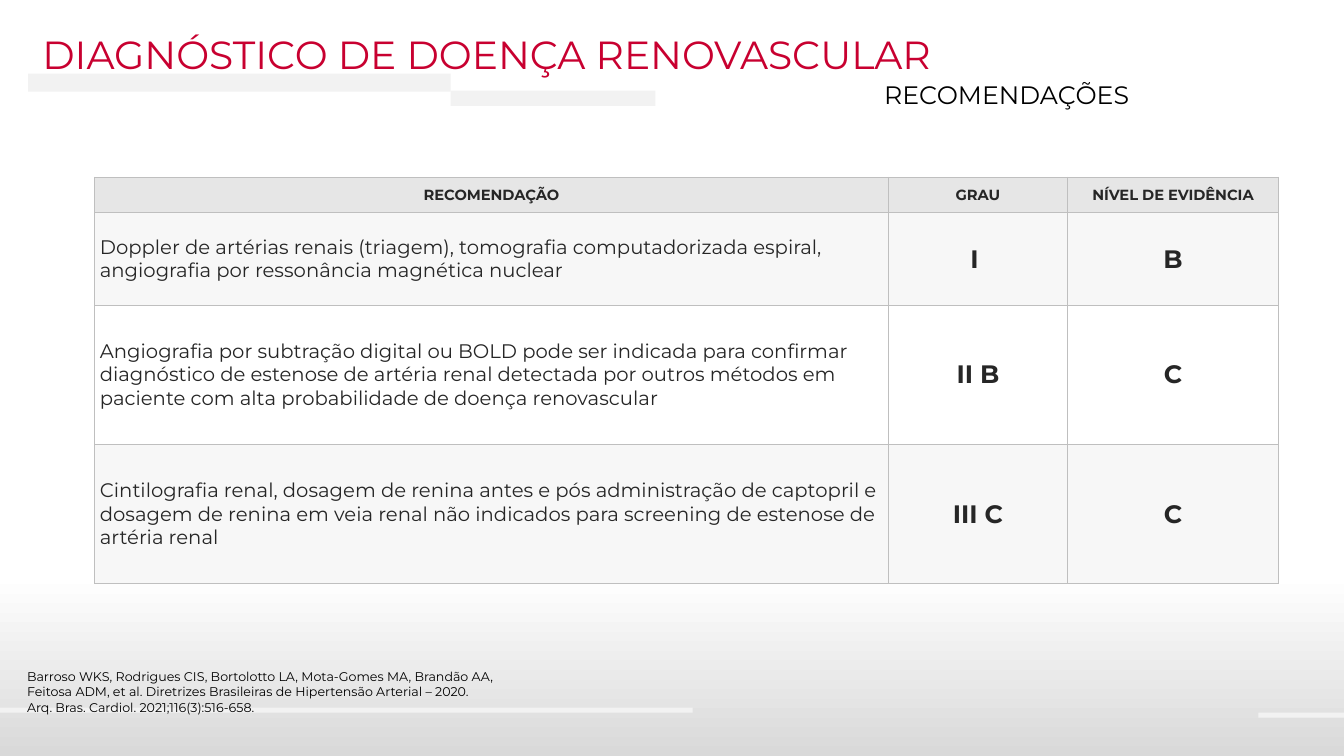
from lxml.etree import SubElement
from pptx import Presentation
from pptx.dml.color import RGBColor as RGB
from pptx.enum.shapes import MSO_SHAPE as SHAPE
from pptx.enum.text import MSO_ANCHOR as ANCHOR, PP_ALIGN as ALIGN
from pptx.oxml import parse_xml
from pptx.oxml.ns import nsdecls, qn
from pptx.util import Inches, Pt

COLORS = {
    "title": "C80030", "black": "000000", "cell_text": "262626",
    "bar": "F2F2F2", "white": "FFFFFF", "shade": "D9D9D9",
    "header": "E6E6E6", "border": "BFBFBF",
}


def rgb(name):
    return RGB.from_string(COLORS[name])


def write(tf, text, size=14, color="black", bold=False, align=ALIGN.LEFT,
          anchor=ANCHOR.TOP, font="Montserrat"):
    """Fill a text frame, one paragraph for each line of text."""
    tf.word_wrap = True
    tf.vertical_anchor = anchor
    for i, line in enumerate(text.split("\n")):
        p = tf.add_paragraph() if i else tf.paragraphs[0]
        p.alignment = align
        r = p.add_run()
        r.text = line
        r.font.name = font
        r.font.size = Pt(size)
        r.font.bold = bold
        r.font.color.rgb = rgb(color)


class SlideBuilder:
    def __init__(self, prs):
        self.slide = prs.slides.add_slide(prs.slide_layouts[5])
        self.shapes = self.slide.shapes

    def rect(self, x, y, w, h, color=None):
        sp = self.shapes.add_shape(SHAPE.RECTANGLE, *map(Inches, (x, y, w, h)))
        sp.shadow.inherit = False
        sp.line.fill.background()
        if color:
            sp.fill.solid()
            sp.fill.fore_color.rgb = rgb(color)
        return sp

    def backdrop(self, w, h):
        fill = self.rect(0, 0, w, h).fill
        fill.gradient()
        fill.gradient_angle = 270
        stops = ((0.76, "white"), (1, "shade"))
        for stop, (position, color) in zip(fill.gradient_stops, stops):
            stop.position = position
            stop.color.rgb = rgb(color)

    def title(self, x, y, w, h, text, **fmt):
        sp = self.shapes.title
        sp.left, sp.top, sp.width, sp.height = map(Inches, (x, y, w, h))
        write(sp.text_frame, text, **fmt)
        # Bring the title in front of the backdrop
        self.shapes._spTree.append(sp._element)

    def text(self, x, y, w, h, text, **fmt):
        sp = self.shapes.add_textbox(*map(Inches, (x, y, w, h)))
        write(sp.text_frame, text, **fmt)

    def cell(self, cell, text, fill=None, alpha=None, **fmt):
        cell.margin_left = cell.margin_right = Inches(0.05)
        cell.margin_top = cell.margin_bottom = 0
        write(cell.text_frame, text, color="cell_text", **fmt)
        cell.vertical_anchor = ANCHOR.MIDDLE
        tc_pr = cell._tc.get_or_add_tcPr()
        if fill:
            cell.fill.solid()
            cell.fill.fore_color.rgb = rgb(fill)
            if alpha:
                color = tc_pr.find(".//" + qn("a:srgbClr"))
                SubElement(color, qn("a:alpha"), val=str(alpha * 1000))
        else:
            cell.fill.background()
        for i, side in enumerate("LRTB"):
            tc_pr.insert(i, parse_xml(
                f'<a:ln{side} {nsdecls("a")} w="12700"><a:solidFill>'
                f'<a:srgbClr val="{COLORS["border"]}"/></a:solidFill></a:ln{side}>'))

    def table(self, x, y, widths, heights, rows):
        frame = self.shapes.add_table(
            len(rows), len(widths),
            *map(Inches, (x, y, sum(widths), sum(heights))))
        table = frame.table
        table.horz_banding = table.first_row = False
        for column, width in zip(table.columns, widths):
            column.width = Inches(width)
        for i, (height, row) in enumerate(zip(heights, rows)):
            table.rows[i].height = Inches(height)
            for j, text in enumerate(row):
                if i == 0:
                    fmt = dict(fill="header", size=10.5)
                else:
                    # Odd body rows are shaded
                    fmt = dict(fill="shade" if i % 2 else None, alpha=20,
                               size=18 if j else 14)
                heading = i == 0 or j > 0
                self.cell(table.cell(i, j), text, bold=heading,
                          align=ALIGN.CENTER if heading else ALIGN.LEFT, **fmt)


ROWS = [
    ("RECOMENDAÇÃO", "GRAU", "NÍVEL DE EVIDÊNCIA"),
    ("Doppler de artérias renais (triagem), tomografia computadorizada espiral, "
     "angiografia por ressonância magnética nuclear", "I ", "B"),
    ("Angiografia por subtração digital ou BOLD pode ser indicada para confirmar "
     "diagnóstico de estenose de artéria renal detectada por outros métodos em "
     "paciente com alta probabilidade de doença renovascular", "II B", "C"),
    ("Cintilografia renal, dosagem de renina antes e pós administração de captopril e "
     "dosagem de renina em veia renal não indicados para screening de estenose de "
     "artéria renal", "III C", "C"),
]

BARS = [(0.28, 0.73, 4.19, 0.18), (4.47, 0.9, 2.03, 0.15),
        (0, 7.02, 6.87, 0.05), (12.48, 7.07, 0.85, 0.05)]

CITATION = (
    "Barroso WKS, Rodrigues CIS, Bortolotto LA, Mota-Gomes MA, Brandão AA,\n"
    "Feitosa ADM, et al. Diretrizes Brasileiras de Hipertensão Arterial – 2020.\n"
    "Arq. Bras. Cardiol. 2021;116(3):516-658.")


def main():
    prs = Presentation()
    prs.slide_width, prs.slide_height = Inches(13.33), Inches(7.5)
    s = SlideBuilder(prs)

    # Backdrop and decorative bars
    s.backdrop(13.33, 7.5)
    for bar in BARS:
        s.rect(*bar, color="bar")

    # Headings
    s.title(0.32, 0.25, 11.46, 0.57, "DIAGNÓSTICO DE DOENÇA RENOVASCULAR",
            size=28, color="title")
    s.text(8.67, 0.74, 4.26, 0.4, "RECOMENDAÇÕES", size=18)

    # Recommendations and their source
    s.table(0.94, 1.76, (7.87, 1.78, 2.09), (0.35, 0.92, 1.38, 1.38), ROWS)
    s.text(0.17, 6.59, 6.24, 0.56, CITATION, size=9)

    prs.save("out.pptx")


if __name__ == "__main__":
    main()
